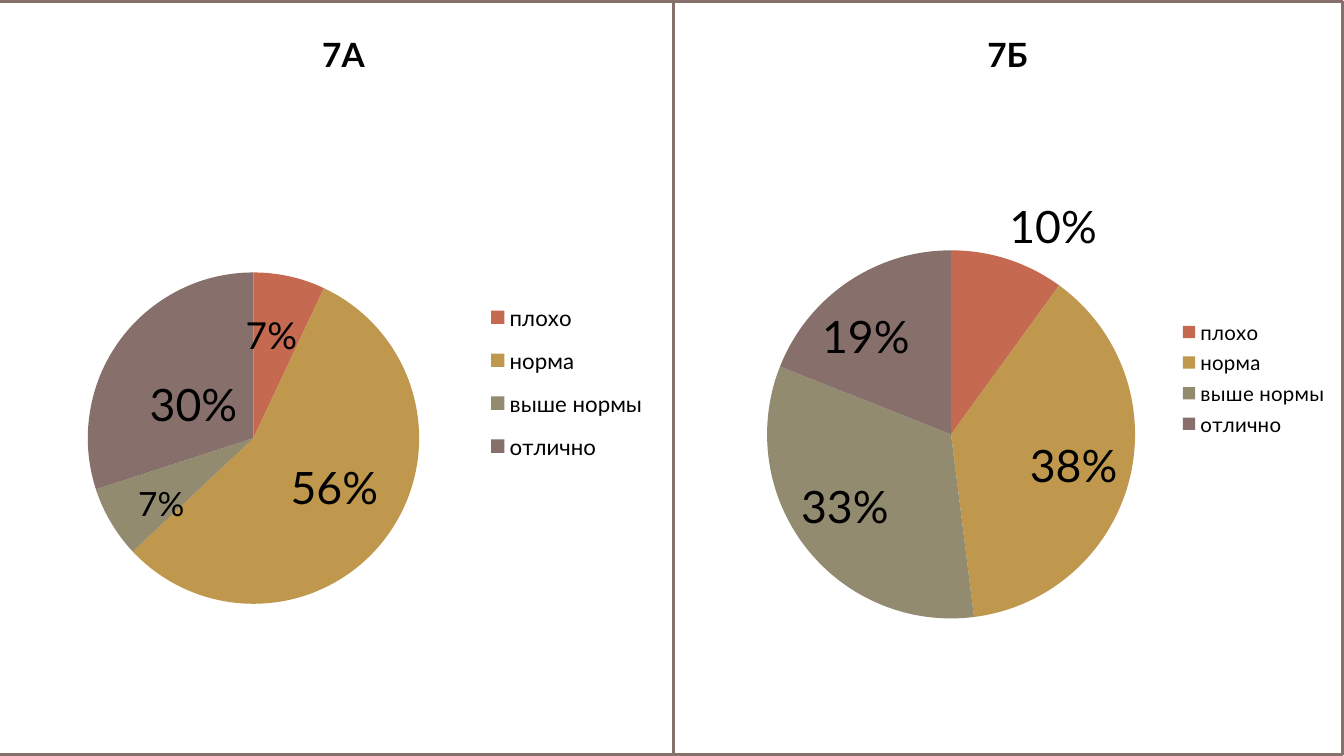
from dataclasses import dataclass

from pptx import Presentation
from pptx.chart.data import CategoryChartData
from pptx.dml.color import RGBColor
from pptx.enum.chart import XL_CHART_TYPE, XL_LABEL_POSITION, XL_LEGEND_POSITION
from pptx.oxml import parse_xml
from pptx.oxml.ns import nsdecls, qn
from pptx.util import Inches, Pt


@dataclass(frozen=True)
class Theme:
    """Colours, font and type sizes of the slide."""

    font: str = "Lato"
    text: str = "000000"
    border: str = "87706B"
    background: str = "FFFFFF"
    slices: tuple = ("C66951", "BF974D", "928B70", "87706B")
    base: int = 10
    title: int = 18
    label: int = 24
    medium_label: int = 20
    small_label: int = 18


THEME = Theme()
GRADES = ("плохо", "норма", "выше нормы", "отлично")
WIDTH = Inches(10)
HEIGHT = WIDTH * 9 // 16


def format_font(font, size, bold=False):
    """Apply the theme font and text colour at the given size."""
    font.name = THEME.font
    font.size = Pt(size)
    font.bold = bold
    font.color.rgb = RGBColor.from_string(THEME.text)


def place(element, after=None, inner=False, **fractions):
    """Give a chart part a manual layout, as fractions of the chart."""
    for layout in element.findall(qn("c:layout")):
        element.remove(layout)
    rules = {"layoutTarget": "inner"} if inner else {}
    if after != "c:idx":
        rules.update(xMode="edge", yMode="edge")
    rules.update(fractions)
    body = "".join(f'<c:{name} val="{value}"/>' for name, value in rules.items())
    layout = parse_xml(
        f"<c:layout {nsdecls('c')}><c:manualLayout>{body}</c:manualLayout></c:layout>"
    )
    if after:
        element.find(qn(after)).addnext(layout)
    else:
        element.insert(0, layout)


def add_frame(chart):
    """Fill and outline the whole chart area."""
    frame = parse_xml(
        f"<c:spPr {nsdecls('c', 'a')}>"
        f'<a:solidFill><a:srgbClr val="{THEME.background}"/></a:solidFill>'
        f'<a:ln w="{Pt(1.5)}"><a:solidFill><a:srgbClr val="{THEME.border}"/>'
        "</a:solidFill></a:ln></c:spPr>"
    )
    chart.element.find(qn("c:chart")).addnext(frame)


def add_title(chart, text, **position):
    """Write the bold chart title."""
    chart.has_title = True
    para = chart.chart_title.text_frame.paragraphs[0]
    span = para.add_run()
    span.text = text
    format_font(span.font, THEME.title, bold=True)
    place(chart.chart_title.element, "c:tx", **position)


def add_legend(chart, size, **position):
    """Show the legend on the right."""
    chart.has_legend = True
    chart.legend.position = XL_LEGEND_POSITION.RIGHT
    chart.legend.include_in_layout = False
    format_font(chart.legend.font, size)
    place(chart.legend._element, "c:legendPos", **position)


def add_labels(series, offsets, sizes):
    """Label each slice with its percentage, shifted from the slice centre."""
    labels = series.data_labels
    labels.show_percentage = True
    labels.show_value = False
    labels.number_format = "0%"
    labels.number_format_is_linked = False
    format_font(labels.font, THEME.label)
    for index, size in enumerate(sizes):
        label = series.points[index].data_label
        label.position = XL_LABEL_POSITION.CENTER
        format_font(label.font, size)
    for element, (x, y) in zip(labels._element.findall(qn("c:dLbl")), offsets):
        element.find(qn("c:showVal")).set("val", "0")
        element.find(qn("c:showPercent")).set("val", "1")
        place(element, "c:idx", x=x, y=y)
    for leader in labels._element.findall(qn("c:showLeaderLines")):
        leader.set("val", "0")


def add_pie(page, name, values, left, width, plot):
    """Add a framed pie chart with theme colours as tall as the slide."""
    data = CategoryChartData()
    data.categories = GRADES
    data.add_series(name, values)
    chart = page.shapes.add_chart(
        XL_CHART_TYPE.PIE, Inches(left), 0, Inches(width), HEIGHT, data
    ).chart
    format_font(chart.font, THEME.base)
    add_frame(chart)
    chart.plots[0].vary_by_categories = True
    for index, color in enumerate(THEME.slices):
        fill = chart.plots[0].series[0].points[index].format.fill
        fill.solid()
        fill.fore_color.rgb = RGBColor.from_string(color)
    place(chart.element.find(".//" + qn("c:plotArea")), inner=True, **plot)
    return chart


def main():
    """Build the slide that compares the two classes."""
    deck = Presentation()
    deck.slide_width, deck.slide_height = WIDTH, HEIGHT
    page = deck.slides.add_slide(deck.slide_layouts[6])
    large, medium, small = THEME.label, THEME.medium_label, THEME.small_label

    first = add_pie(page, "7А", (7, 56, 7, 30), -0.04, 5.2,
                    dict(x=0.13, y=0.36, w=0.48, h=0.44))
    add_title(first, "7А", x=0.46, y=0.03)
    add_legend(first, 12, x=0.7, y=0.38, w=0.24, h=0.25)
    add_labels(first.plots[0].series[0],
               ((0, -0.03), (0.02, 0), (-0.03, 0.03), (0.01, 0.02)),
               (medium, large, small, large))

    second = add_pie(page, "7Б", (10, 38, 33, 19), 5, 5,
                     dict(x=0.14, y=0.33, w=0.55, h=0.49))
    add_title(second, "7Б", x=0.46, y=0.03)
    add_legend(second, 11, x=0.755, y=0.415, w=0.225, h=0.17)
    add_labels(second.plots[0].series[0],
               ((0.11, -0.16), (0.05, 0.01), (-0.05, 0.02), (-0.05, -0.03)),
               (large,) * 4)

    deck.save("out.pptx")


if __name__ == "__main__":
    main()
